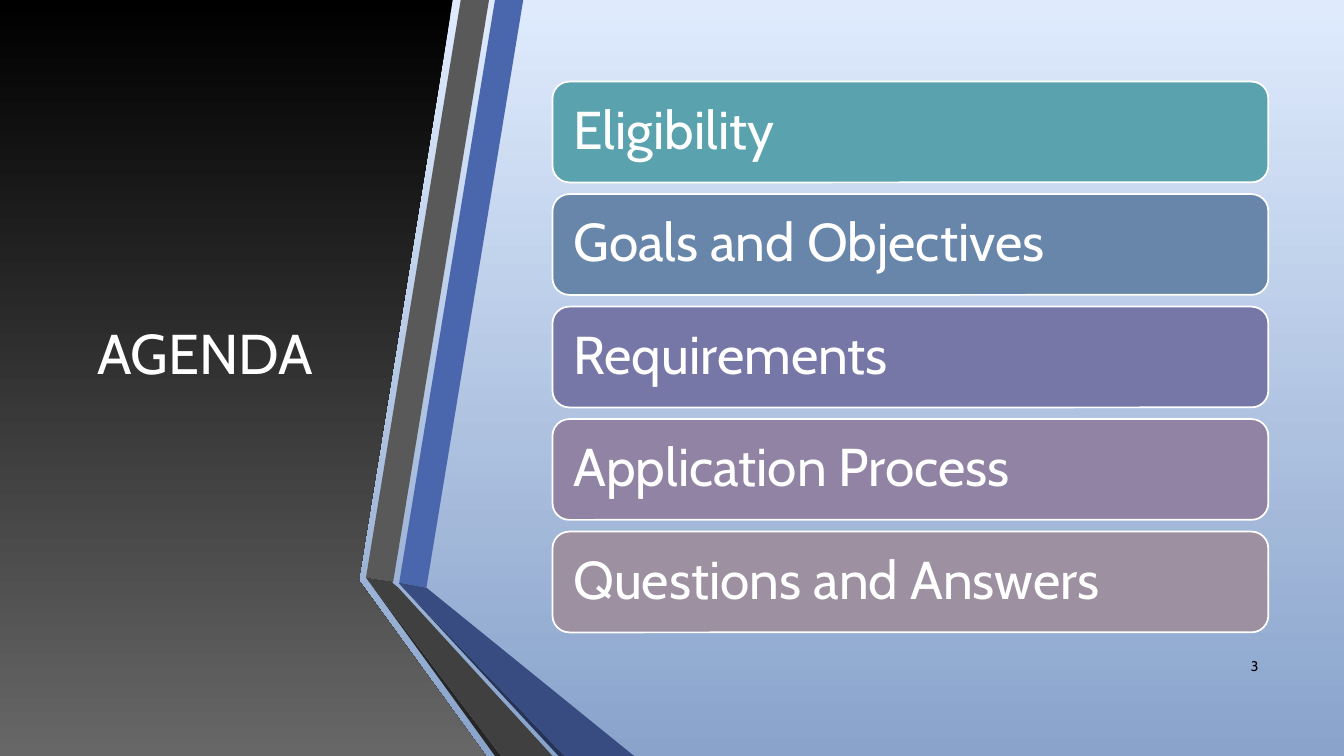
from dataclasses import dataclass
from typing import Any

from pptx import Presentation
from pptx.dml.color import RGBColor as Rgb
from pptx.enum.shapes import MSO_SHAPE as Kind
from pptx.enum.text import MSO_ANCHOR as Anchor, MSO_AUTO_SIZE as Fit, PP_ALIGN as Align
from pptx.util import Emu, Pt

CELL = 9144
COLS, ROWS = 1333, 750
FONT = "Cabin"
WHITE, BLACK = "FFFFFF", "000000"


@dataclass(frozen=True)
class Band:
    """A folded ribbon part: its fill and its corners as (column, row)."""
    fill: str
    points: tuple[tuple[int, int], ...]


@dataclass(frozen=True)
class Topic:
    """An agenda bar: its words and its fill."""
    words: str
    fill: str


@dataclass(frozen=True)
class Box:
    """A place on the grid, in columns and rows."""
    left: float
    top: float
    width: float
    height: float

    def spans(self) -> list[Emu]:
        """Give left, top, width and height as lengths."""
        return [grid(n) for n in (self.left, self.top, self.width, self.height)]


PANEL = ((0, 0), (449, 0), (356, 575), (356, 576), (482, ROWS), (0, ROWS))
BANDS = (
    Band("4A66AC", ((396, 578), (423, 583), (519, 0), (491, 0))),
    Band("595959", ((485, 0), (457, 0), (363, 573), (390, 577))),
    Band("262626", ((363, 573), (491, ROWS), (497, ROWS))),
    Band("253356", ((396, 579), (554, ROWS), (560, ROWS))),
    Band("384C81", ((396, 578), (396, 579), (560, ROWS), (629, ROWS), (423, 583))),
    Band("404040", ((363, 573), (497, ROWS), (548, ROWS), (395, 583), (389, 578), (390, 577))),
)
TOPICS = (
    Topic("Eligibility", "5AA2AE"),
    Topic("Goals and Objectives", "6885AA"),
    Topic("Requirements", "7677A6"),
    Topic("Application Process", "9083A3"),
    Topic("Questions and Answers", "9D90A0"),
)
FIRST = Box(548, 81, 710, 100)
PITCH = 111.6


def grid(count: float) -> Emu:
    """Turn a count of grid cells into a length."""
    return Emu(round(count * CELL))


def tint(code: str) -> Rgb:
    """Turn a hex string into a colour."""
    return Rgb.from_string(code)


def fade(fill: Any, top: str, base: str) -> None:
    """Fill from the top colour down to the base colour."""
    fill.gradient()
    fill.gradient_angle = 270
    for stop, code in zip(fill.gradient_stops, (top, base)):
        stop.color.rgb = tint(code)


def write(frame: Any, words: str, size: float, code: str, align: Align) -> None:
    """Put one run of centred-height text in a frame."""
    frame.word_wrap = True
    frame.auto_size = Fit.NONE
    frame.vertical_anchor = Anchor.MIDDLE
    para = frame.paragraphs[0]
    para.alignment = align
    para.line_spacing = 0.9
    run = para.add_run()
    run.text = words
    run.font.name = FONT
    run.font.size = Pt(size)
    run.font.color.rgb = tint(code)


def trace(slide: Any, points: tuple[tuple[int, int], ...]) -> Any:
    """Draw a closed outline with no line or shadow."""
    pen = slide.shapes.build_freeform(*points[0], scale=CELL)
    pen.add_line_segments(points[1:], close=True)
    shape = pen.convert_to_shape()
    shape.shadow.inherit = False
    shape.line.fill.background()
    return shape


def place(shape: Any, box: Box) -> None:
    """Move and size a shape to a box."""
    shape.left, shape.top, shape.width, shape.height = box.spans()


def draw(slide: Any, topic: Topic, row: int) -> None:
    """Draw one agenda bar in its row."""
    box = Box(FIRST.left, FIRST.top + row * PITCH, FIRST.width, FIRST.height)
    bar = slide.shapes.add_shape(Kind.ROUNDED_RECTANGLE, *box.spans())
    bar.shadow.inherit = False
    bar.fill.solid()
    bar.fill.fore_color.rgb = tint(topic.fill)
    bar.line.color.rgb = tint(WHITE)
    bar.line.width = Pt(1.25)
    frame = bar.text_frame
    frame.margin_left = frame.margin_right = grid(16)
    write(frame, topic.words, 38, WHITE, Align.LEFT)


def main() -> None:
    """Build the agenda slide and save it."""
    deck = Presentation()
    deck.slide_width, deck.slide_height = grid(COLS), grid(ROWS)
    slide = deck.slides.add_slide(deck.slide_layouts[5])
    fade(slide.background.fill, "DFEBFD", "89A3CB")

    title = slide.shapes.title
    panel = trace(slide, PANEL)
    fade(panel.fill, BLACK, "676767")
    title.element.addprevious(panel.element)
    place(title, Box(59, 75, 289, 558))
    write(title.text_frame, "AGENDA", 40, WHITE, Align.CENTER)

    for band in BANDS:
        shape = trace(slide, band.points)
        shape.fill.solid()
        shape.fill.fore_color.rgb = tint(band.fill)
    for row, topic in enumerate(TOPICS):
        draw(slide, topic, row)

    number = slide.shapes.add_textbox(*Box(1198, 642, 60, 40).spans())
    write(number.text_frame, "3", 10, BLACK, Align.RIGHT)
    deck.save("out.pptx")


if __name__ == "__main__":
    main()
